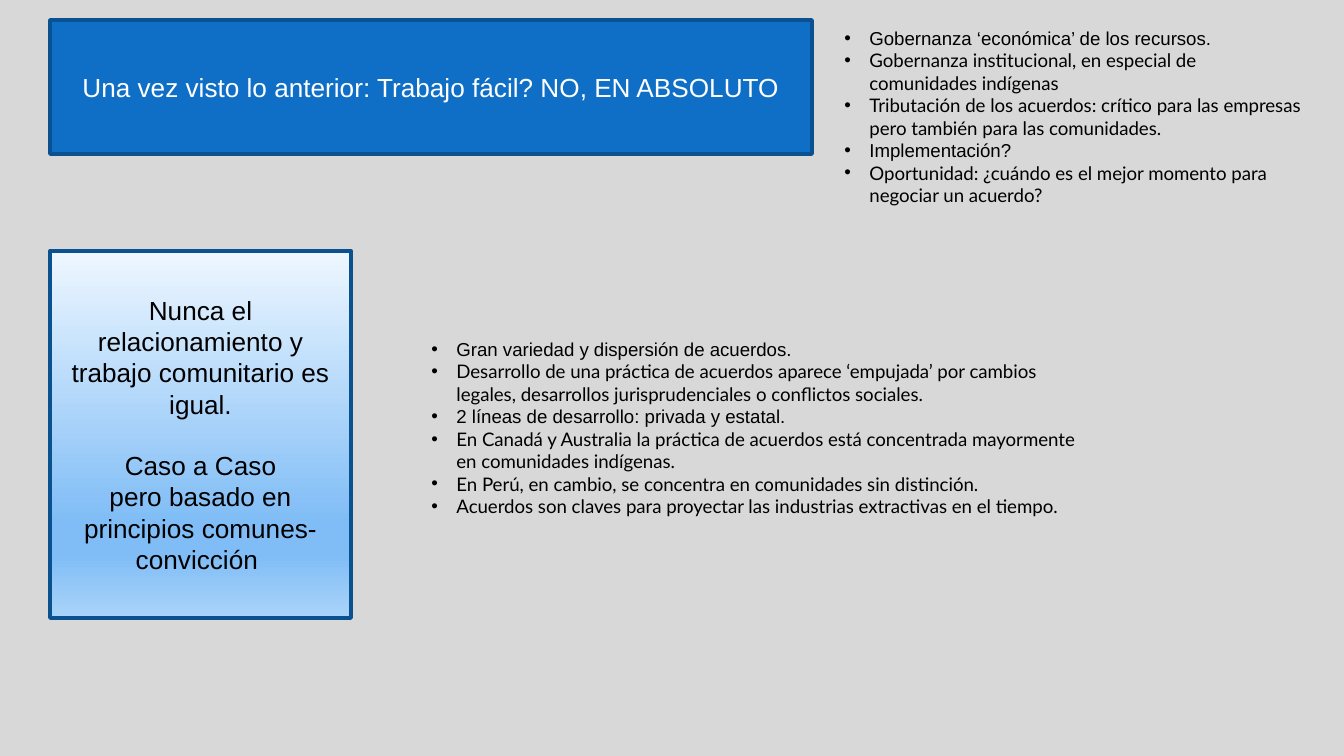
import pptx
import pptx.dml.color
import pptx.enum.shapes
import pptx.enum.text
import pptx.oxml
import pptx.oxml.ns
import pptx.util

PX = 914400 / 134.4  # EMU per px
COLORS = {
    "background": "D8D8D8",
    "blue": "0F6FC6",
    "border": "0A5190",
    "white": "FFFFFF",
    "black": "000000",
}
BOX_GRADIENT = [(0, "EEF7FF"), (74, "80BDF6"), (83, "80BDF6"), (100, "AAD4F9")]


def px(length):
    return pptx.util.Emu(round(length * PX))


def rgb(name):
    return pptx.dml.color.RGBColor.from_string(COLORS[name])


class SlideBuilder:
    heading_size = 14
    list_size = 10
    border_width = 2
    bullet_indent = 25

    def __init__(self, slide):
        self.slide = slide
        slide.background.fill.solid()
        slide.background.fill.fore_color.rgb = rgb("background")

    def place(self, shape, left, top, width, height, anchor):
        shape.left, shape.top = px(left), px(top)
        shape.width, shape.height = px(width), px(height)
        frame = shape.text_frame
        frame.word_wrap = True
        frame.auto_size = pptx.enum.text.MSO_AUTO_SIZE.NONE
        frame.vertical_anchor = anchor
        frame.margin_left = frame.margin_right = pptx.util.Inches(0.1)
        frame.margin_top = frame.margin_bottom = pptx.util.Inches(0.05)

    def fill_text(self, shape, lines, size, color, alignment):
        frame = shape.text_frame
        frame.text = "\n".join(text for text, font in lines)
        for paragraph, (text, font) in zip(frame.paragraphs, lines):
            paragraph.alignment = alignment
            paragraph.space_before = pptx.util.Pt(0)
            paragraph.font.name = font
            paragraph.font.size = pptx.util.Pt(size)
            paragraph.font.color.rgb = rgb(color)

    def heading(self, shape, bounds, texts, color):
        self.place(shape, *bounds, pptx.enum.text.MSO_ANCHOR.MIDDLE)
        shape.line.color.rgb = rgb("border")
        shape.line.width = pptx.util.Pt(self.border_width)
        self.fill_text(shape, [(text, "Arial") for text in texts],
                       self.heading_size, color,
                       pptx.enum.text.PP_ALIGN.CENTER)

    def title(self, bounds, text):
        shape = self.slide.shapes.title
        self.heading(shape, bounds, [text], "white")
        shape.fill.solid()
        shape.fill.fore_color.rgb = rgb("blue")

    def gradient_box(self, bounds, texts, stops):
        shape = self.slide.shapes.add_shape(
            pptx.enum.shapes.MSO_SHAPE.RECTANGLE, 0, 0, 0, 0)
        shape.shadow.inherit = False
        self.heading(shape, bounds, texts, "black")
        shape.fill.gradient()
        shape.fill.gradient_angle = 270
        stop_list = shape.element.spPr.find(".//" + pptx.oxml.ns.qn("a:gsLst"))
        for stop in list(stop_list):
            stop_list.remove(stop)
        for position, color in stops:
            stop_list.append(pptx.oxml.parse_xml(
                f'<a:gs {pptx.oxml.ns.nsdecls("a")} pos="{position * 1000}">'
                f'<a:srgbClr val="{color}"/></a:gs>'))
        return shape

    def bullets(self, index, bounds, lines):
        shape = self.slide.placeholders[index]
        self.place(shape, *bounds, pptx.enum.text.MSO_ANCHOR.TOP)
        self.fill_text(shape, lines, self.list_size, "black",
                       pptx.enum.text.PP_ALIGN.LEFT)
        indent = px(self.bullet_indent)
        for paragraph in shape.text_frame.paragraphs:
            properties = paragraph._p.get_or_add_pPr()
            properties.set("marL", str(indent))
            properties.set("indent", str(-indent))


def main():
    presentation = pptx.Presentation()
    presentation.slide_width, presentation.slide_height = px(1344), px(756)
    two_content = presentation.slide_layouts[3]
    builder = SlideBuilder(presentation.slides.add_slide(two_content))

    # Findings about the agreements
    builder.bullets(1, (418, 331, 672, 195), [
        ("Gran variedad y dispersión de acuerdos.", "Arial"),
        ("Desarrollo de una práctica de acuerdos aparece ‘empujada’ por cambios "
         "legales, desarrollos jurisprudenciales o conflictos sociales.", "Lato"),
        ("2 líneas de desarrollo: privada y estatal.", "Arial"),
        ("En Canadá y Australia la práctica de acuerdos está concentrada "
         "mayormente en comunidades indígenas.", "Lato"),
        ("En Perú, en cambio, se concentra en comunidades sin distinción.", "Lato"),
        ("Acuerdos son claves para proyectar las industrias extractivas en el "
         "tiempo.", "Lato"),
    ])

    # Open challenges
    builder.bullets(2, (831, 20, 487, 195), [
        ("Gobernanza ‘económica’ de los recursos.", "Arial"),
        ("Gobernanza institucional, en especial de comunidades indígenas", "Lato"),
        ("Tributación de los acuerdos: crítico para las empresas pero también "
         "para las comunidades.", "Lato"),
        ("Implementación?", "Arial"),
        ("Oportunidad: ¿cuándo es el mejor momento para negociar un acuerdo?",
         "Lato"),
    ])

    # Title banner
    builder.title((50, 20, 762, 134),
                  "Una vez visto lo anterior: Trabajo fácil? NO, EN ABSOLUTO")

    # Key message, with a one-line gap before its second part
    message = builder.gradient_box((50, 251, 301, 367), [
        "Nunca el relacionamiento y trabajo comunitario es igual.",
        "Caso a Caso",
        "pero basado en principios comunes-convicción ",
    ], BOX_GRADIENT)
    message.text_frame.paragraphs[1].space_before = pptx.util.Pt(16)

    presentation.save("out.pptx")


if __name__ == "__main__":
    main()
